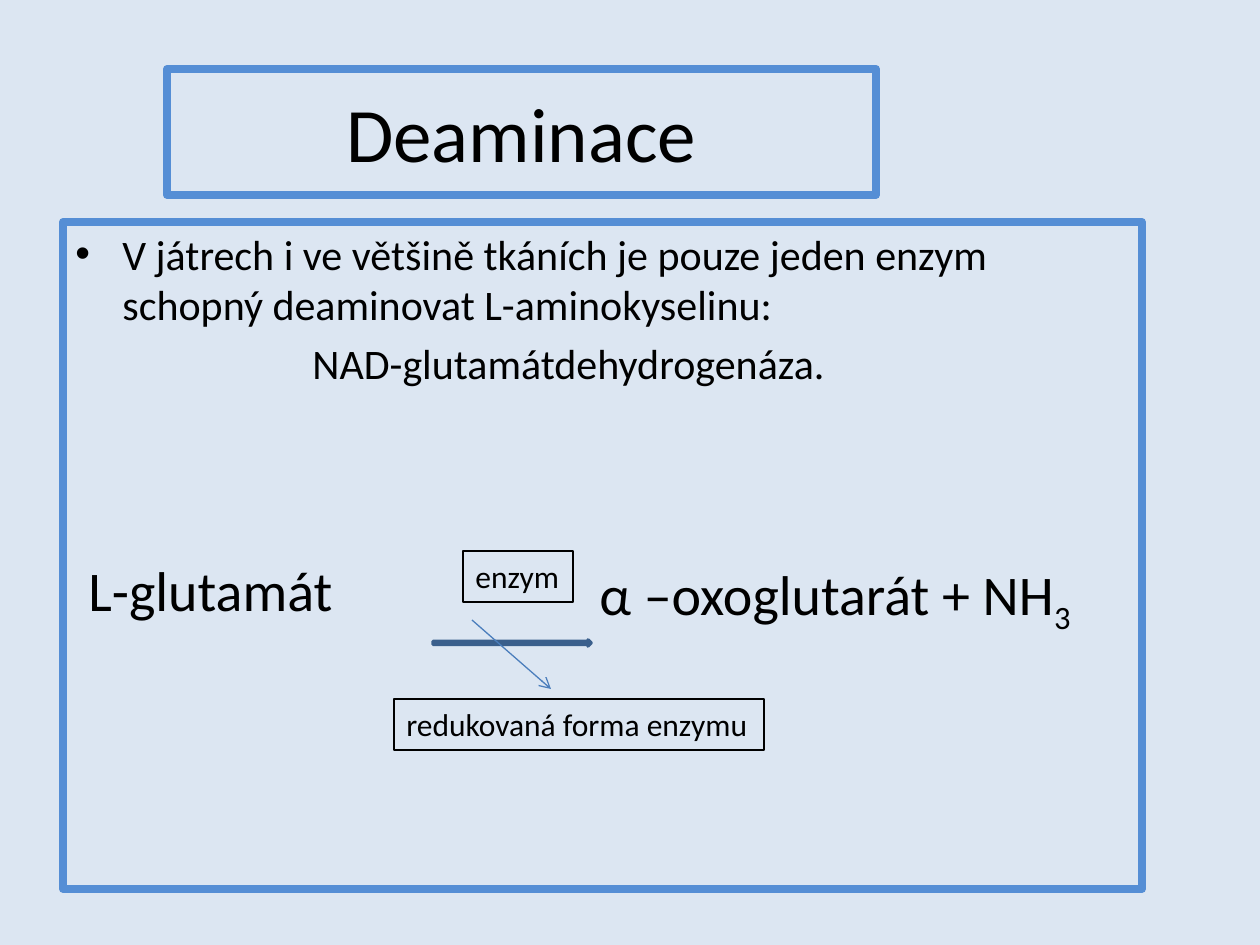
from lxml.etree import SubElement
from pptx import Presentation
from pptx.dml.color import RGBColor
from pptx.enum.shapes import MSO_CONNECTOR, MSO_SHAPE
from pptx.enum.text import MSO_ANCHOR, PP_ALIGN
from pptx.oxml.ns import qn
from pptx.util import Emu, Pt

PX = 914400 // 126
COLORS = {"background": "DCE6F2", "frame": "558ED5", "text": "000000",
          "arrow": "4F81BD", "arrow_edge": "3A5F8C", "pointer": "4B7EBC"}

# Content: runs are (text, baseline shift in thousandths of a percent)
TITLE = [{"runs": [("Deaminace", 0)], "size": 44, "align": PP_ALIGN.CENTER}]
BODY = [
    {"runs": [("V játrech i ve většině tkáních je pouze jeden enzym "
               "schopný deaminovat L-aminokyselinu:", 0)],
     "size": 24, "before": 4.8, "margin": 47, "indent": -47, "bullet": "•"},
    {"runs": [("NAD-glutamátdehydrogenáza.", 0)],
     "size": 24, "before": 4.8, "margin": 237},
    {"runs": [("L-glutamát", 0)], "size": 32, "before": 96, "margin": 13},
]
PRODUCT = [{"runs": [("α –oxoglutarát + NH", 0), ("3", -25000)], "size": 32}]
ENZYME = [{"runs": [("enzym", 0)], "size": 18}]
REDUCED = [{"runs": [("redukovaná forma enzymu", 0)], "size": 18}]

# Boxes: left, top, width, height in px
TITLE_BOX, BODY_BOX = (167, 69, 709, 126), (63, 222, 1079, 667)
PRODUCT_BOX = (587, 553, 500, 81)
ENZYME_BOX, REDUCED_BOX = (463, 551, 110, 51), (394, 699, 370, 51)
REACTION_BOX = (433, 640, 158, 6)
# Pointer: start x, start y, end x, end y in px
POINTER = (472, 620, 551, 689)


def px(values):
    return [Emu(value * PX) for value in values]


def rgb(name):
    return RGBColor.from_string(COLORS[name])


def set_line(line, color, width):
    line.color.rgb = rgb(color)
    line.width = Pt(width)


def fill_text(frame, paragraphs):
    for number, item in enumerate(paragraphs):
        paragraph = frame.add_paragraph() if number else frame.paragraphs[0]
        paragraph.alignment = item.get("align", PP_ALIGN.LEFT)
        paragraph.space_before = Pt(item.get("before", 0))
        properties = paragraph._p.get_or_add_pPr()
        for attribute, key in (("marL", "margin"), ("indent", "indent")):
            properties.set(attribute, str(item.get(key, 0) * PX))
        if "bullet" in item:
            SubElement(properties, qn("a:buFont"), typeface="Arial")
            SubElement(properties, qn("a:buChar"), char=item["bullet"])
        for text, baseline in item["runs"]:
            run = paragraph.add_run()
            run.text = text
            style = {"name": "Calibri", "size": Pt(item["size"])}
            for attribute, value in style.items():
                setattr(run.font, attribute, value)
            run.font.color.rgb = rgb("text")
            if baseline:
                run._r.get_or_add_rPr().set("baseline", str(baseline))


def add_box(slide, place, paragraphs, border=None, wrap=True, anchor=MSO_ANCHOR.TOP):
    box = slide.shapes.add_textbox(*px(place))
    if border:
        set_line(box.line, *border)
    for attribute, value in {"word_wrap": wrap, "vertical_anchor": anchor}.items():
        setattr(box.text_frame, attribute, value)
    fill_text(box.text_frame, paragraphs)


def main():
    deck = Presentation()
    deck.slide_width, deck.slide_height = px((1260, 945))
    slide = deck.slides.add_slide(deck.slide_layouts[6])
    slide.background.fill.solid()
    slide.background.fill.fore_color.rgb = rgb("background")

    # Title, framed text and the reaction product
    add_box(slide, TITLE_BOX, TITLE, ("frame", 4.5), anchor=MSO_ANCHOR.MIDDLE)
    add_box(slide, BODY_BOX, BODY, ("frame", 4.5))
    add_box(slide, PRODUCT_BOX, PRODUCT)

    # Reaction arrow
    reaction = slide.shapes.add_shape(MSO_SHAPE.RIGHT_ARROW, *px(REACTION_BOX))
    reaction.shadow.inherit = False
    reaction.fill.solid()
    reaction.fill.fore_color.rgb = rgb("arrow")
    set_line(reaction.line, "arrow_edge", 2)

    # Enzyme and its reduced form
    add_box(slide, ENZYME_BOX, ENZYME, ("text", 0.75), wrap=False)
    pointer = slide.shapes.add_connector(MSO_CONNECTOR.STRAIGHT, *px(POINTER))
    set_line(pointer.line, "pointer", 0.75)
    SubElement(pointer.line._get_or_add_ln(), qn("a:tailEnd"), type="arrow")
    SubElement(pointer._element.spPr, qn("a:effectLst"))
    add_box(slide, REDUCED_BOX, REDUCED, ("text", 1), wrap=False)

    deck.save("out.pptx")


if __name__ == "__main__":
    main()
